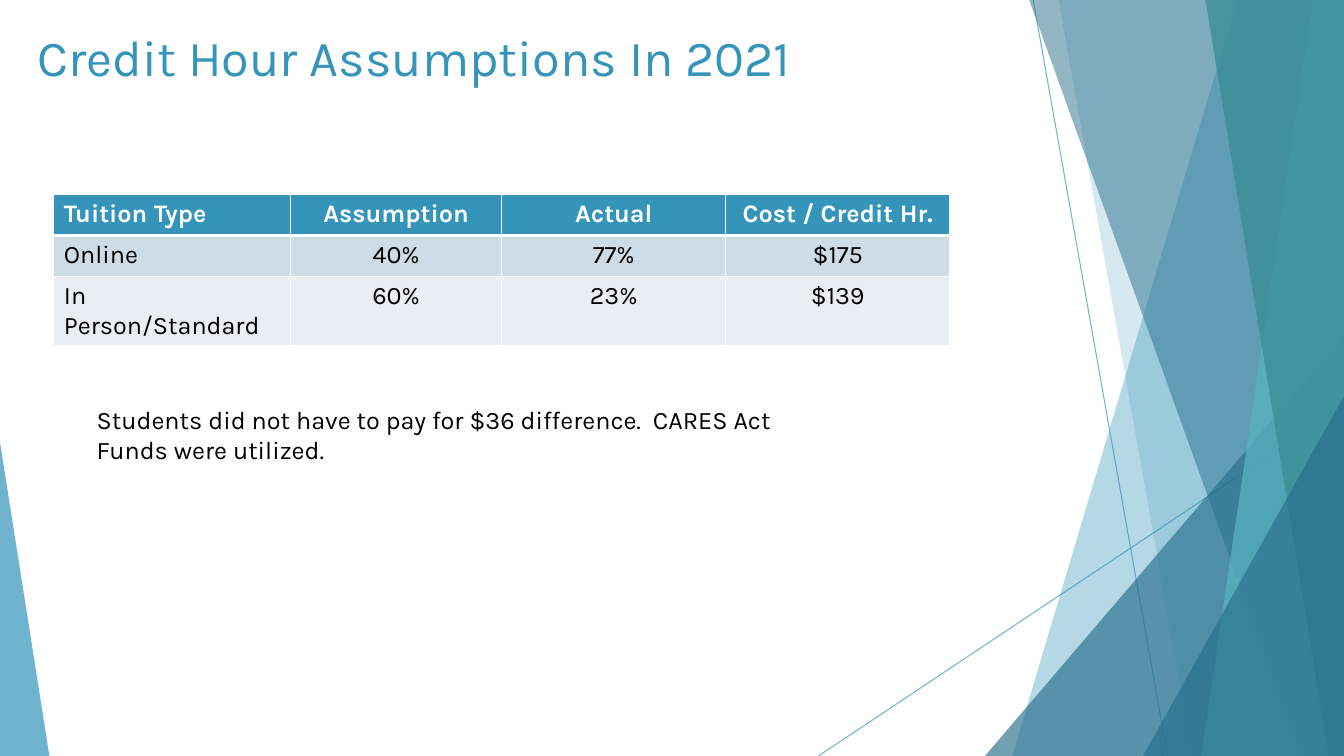
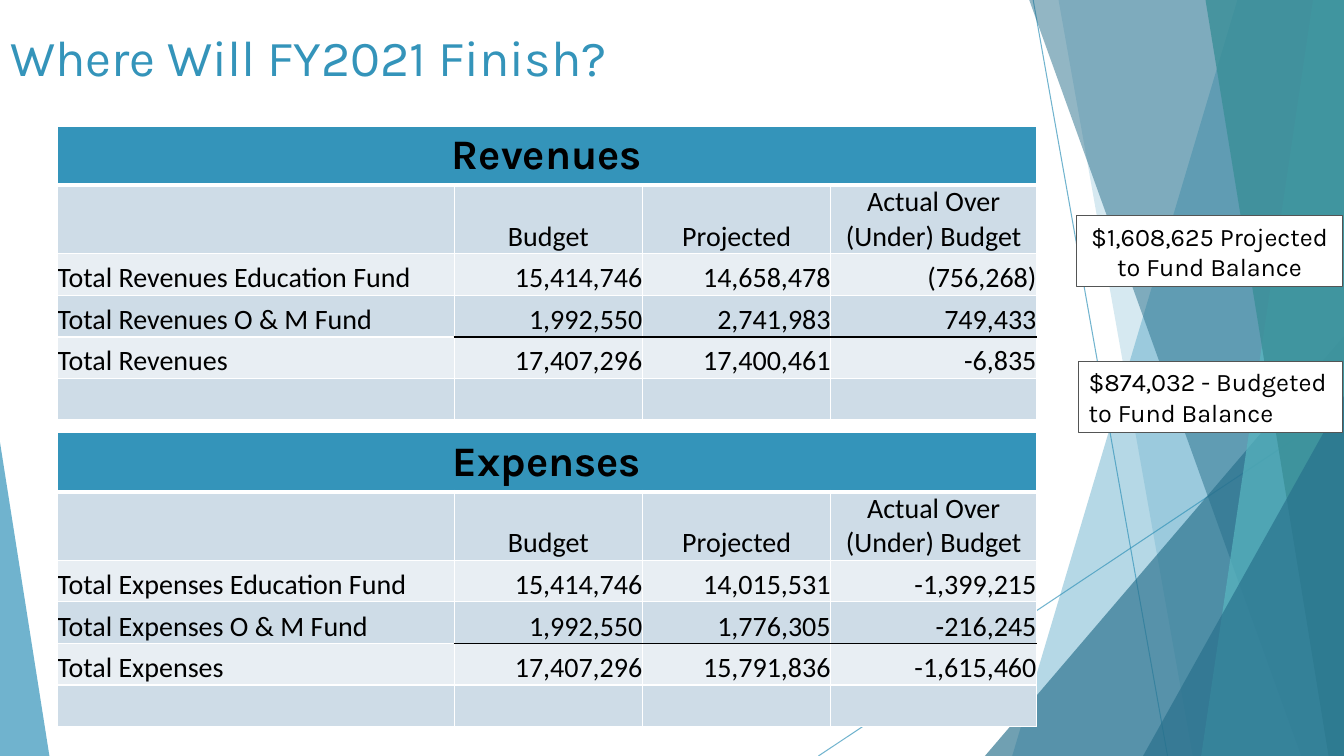
from dataclasses import dataclass
from typing import NamedTuple

from lxml import etree
from pptx import Presentation, presentation as pres, slide as sl, table as tb
from pptx import util as u
from pptx.dml.color import RGBColor
from pptx.enum import shapes, text
from pptx.oxml.ns import qn
from pptx.shapes import autoshape, base
from pptx.text.text import TextFrame

SLIDE_WIDTH, SLIDE_HEIGHT = 960, 540
BAND_TOP = -0.6
COLORS = {
    "accent": "3494BA",
    "deep": "276F8B",
    "teal": "58B6C0",
    "dark_teal": "3A8F98",
    "row_dark": "CEDCE7",
    "row_light": "E8EEF3",
    "outline": "535555",
    "white": "FFFFFF",
    "black": "000000",
}
HEADING_FONT, FIGURE_FONT = "Karla", "Calibri"
LEFT, CENTER, RIGHT = text.PP_ALIGN.LEFT, text.PP_ALIGN.CENTER, text.PP_ALIGN.RIGHT


class Box(NamedTuple):
    left: float
    top: float
    width: float
    height: float

    def lengths(self) -> list[u.Length]:
        return [u.Pt(value) for value in self]


@dataclass(frozen=True)
class Ray:
    start: tuple[float, float]
    end: tuple[float, float]


@dataclass(frozen=True)
class Band:
    """A slanted left edge, filled out to the right side of the slide."""
    top_x: float
    bottom_x: float
    color: str
    opacity: int


@dataclass(frozen=True)
class Triangle:
    box: Box
    apex: float
    color: str
    opacity: int


@dataclass(frozen=True)
class TextStyle:
    size: float
    font: str = HEADING_FONT
    color: str = "black"
    bold: bool = False
    align: text.PP_ALIGN = LEFT


@dataclass(frozen=True)
class FundTable:
    subject: str
    top: float
    education: tuple[str, str, str]
    maintenance: tuple[str, str, str]
    total: tuple[str, str, str]


@dataclass(frozen=True)
class Callout:
    box: Box
    words: str
    align: text.PP_ALIGN


RAYS = [
    Ray((738, 0), (834, SLIDE_HEIGHT)),
    Ray((SLIDE_WIDTH, 290), (584.6, SLIDE_HEIGHT)),
]
FACETS = [
    Band(884, 723, "accent", 36),
    Band(756, 852, "accent", 20),
    Triangle(Box(703.5, 240, 256.5, 300), 1, "deep", 66),
    Band(735, 929.5, "deep", 50),
    Band(938, 858, "teal", 70),
    Band(861, 949, "dark_teal", 80),
    Triangle(Box(816.5, 283, 143.5, 257), 1, "deep", 66),
    Triangle(Box(0, 316, 35.3, 224), 0, "accent", 70),
]

TUITION_ROWS = [
    ("Tuition Type", "Assumption", "Actual", "Cost / Credit Hr."),
    ("Online", "40%", "77%", "$175"),
    ("In Person/Standard", "60%", "23%", "$139"),
]
FUND_HEADINGS = ("", "Budget", "Projected", "Actual Over (Under) Budget")
FUND_TABLES = [
    FundTable("Revenues", 90,
              ("15,414,746", "14,658,478", "(756,268)"),
              ("1,992,550", "2,741,983", "749,433"),
              ("17,407,296", "17,400,461", "-6,835")),
    FundTable("Expenses", 309,
              ("15,414,746", "14,015,531", "-1,399,215"),
              ("1,992,550", "1,776,305", "-216,245"),
              ("17,407,296", "15,791,836", "-1,615,460")),
]
CALLOUTS = [
    Callout(Box(769, 154, 190, 51), "$1,608,625 Projected to Fund Balance", CENTER),
    Callout(Box(770.5, 258, 188.5, 51), "$874,032 - Budgeted to Fund Balance", LEFT),
]


def rgb(name: str) -> RGBColor:
    return RGBColor.from_string(COLORS[name])


def write(frame: TextFrame, words: str, style: TextStyle) -> None:
    frame.text = words
    for paragraph in frame.paragraphs:
        paragraph.alignment = style.align
        for run in paragraph.runs:
            run.font.size = u.Pt(style.size)
            run.font.name = style.font
            run.font.bold = style.bold
            run.font.color.rgb = rgb(style.color)


def set_opacity(shape: base.BaseShape, percent: int) -> None:
    for color in shape.element.iter(qn("a:srgbClr")):
        etree.SubElement(color, qn("a:alpha")).set("val", str(percent * 1000))


def draw_ray(slide: sl.Slide, ray: Ray) -> base.BaseShape:
    ends = [u.Pt(value) for value in ray.start + ray.end]
    connector = slide.shapes.add_connector(shapes.MSO_CONNECTOR.STRAIGHT, *ends)
    connector.line.color.rgb = rgb("accent")
    connector.line.width = u.Pt(0.75)
    set_opacity(connector, 70)
    etree.SubElement(connector.element.spPr, qn("a:effectLst"))
    return connector


def outline_facet(slide: sl.Slide, facet: Band | Triangle) -> autoshape.Shape:
    if isinstance(facet, Triangle):
        shape = slide.shapes.add_shape(
            shapes.MSO_SHAPE.ISOSCELES_TRIANGLE, *facet.box.lengths())
        shape.adjustments[0] = facet.apex
        return shape
    corners = [(facet.top_x, BAND_TOP), (SLIDE_WIDTH, BAND_TOP),
               (SLIDE_WIDTH, SLIDE_HEIGHT), (facet.bottom_x, SLIDE_HEIGHT)]
    first, *others = [(u.Pt(x), u.Pt(y)) for x, y in corners]
    builder = slide.shapes.build_freeform(*first)
    builder.add_line_segments(others, close=True)
    return builder.convert_to_shape()


def draw_facet(slide: sl.Slide, facet: Band | Triangle) -> base.BaseShape:
    shape = outline_facet(slide, facet)
    shape.shadow.inherit = False
    shape.fill.solid()
    shape.fill.fore_color.rgb = rgb(facet.color)
    shape.line.fill.background()
    set_opacity(shape, facet.opacity)
    return shape


def decorate_layout(slide: sl.Slide) -> None:
    """Draw the backdrop and move it to the layout, so that all slides share it."""
    backdrop = [draw_ray(slide, ray) for ray in RAYS]
    backdrop += [draw_facet(slide, facet) for facet in FACETS]
    for position, shape in enumerate(backdrop, start=2):
        slide.slide_layout.shapes.element.insert(position, shape.element)


def add_titled_slide(presentation: pres.Presentation, words: str, box: Box) -> sl.Slide:
    slide = presentation.slides.add_slide(presentation.slide_layouts[5])
    title = slide.shapes.title
    title.left, title.top, title.width, title.height = box.lengths()
    title.text_frame.vertical_anchor = text.MSO_ANCHOR.TOP
    title.text_frame.auto_size = text.MSO_AUTO_SIZE.NONE
    write(title.text_frame, words, TextStyle(36, color="accent"))
    return slide


def set_border(cell: tb._Cell, side: str, color: str, width: float) -> None:
    properties = cell._tc.get_or_add_tcPr()
    line = etree.SubElement(properties, qn(f"a:ln{side}"), w=str(u.Pt(width)))
    fill = etree.SubElement(line, qn("a:solidFill"))
    etree.SubElement(fill, qn("a:srgbClr"), val=COLORS[color])


def add_grid(slide: sl.Slide, left: float, top: float, widths: list[float],
             heights: list[float], ruled_row: int | None = None) -> tb.Table:
    """Add an empty banded table, with a black rule under the figures of ruled_row."""
    box = Box(left, top, sum(widths), sum(heights))
    table = slide.shapes.add_table(len(heights), len(widths), *box.lengths()).table
    table.first_row = table.horz_banding = False
    for column, width in zip(table.columns, widths):
        column.width = u.Pt(width)
    for index, (row, height) in enumerate(zip(table.rows, heights)):
        row.height = u.Pt(height)
        band = "row_dark" if index % 2 else "row_light"
        for position, cell in enumerate(row.cells):
            ruled = ruled_row is not None and position > 0
            above = "black" if ruled and index == ruled_row + 1 else "white"
            below = "black" if ruled and index == ruled_row else "white"
            set_border(cell, "L", "white", 1)
            set_border(cell, "R", "white", 1)
            set_border(cell, "T", above, 3 if index == 1 else 1)
            set_border(cell, "B", below, 1 if index else 3)
            cell.fill.solid()
            cell.fill.fore_color.rgb = rgb(band if index else "accent")
    return table


def add_tuition_table(slide: sl.Slide) -> None:
    table = add_grid(slide, 38.5, 139, [169, 151, 160, 160], [29.2, 29.2, 49.3])
    for row, words in enumerate(TUITION_ROWS):
        for column, word in enumerate(words):
            style = TextStyle(18, color="black" if row else "white",
                              bold=row == 0, align=CENTER if column else LEFT)
            write(table.cell(row, column).text_frame, word, style)


def add_fund_table(slide: sl.Slide, fund: FundTable) -> None:
    table = add_grid(slide, 41, fund.top, [283.5, 134.5, 134.5, 147],
                     [42.3, 48.8, 29.5, 30, 29.5, 29.5], ruled_row=3)
    heading = table.cell(0, 0)
    heading.merge(table.cell(0, 3))
    write(heading.text_frame, fund.subject, TextStyle(30, bold=True, align=CENTER))
    label = f"Total {fund.subject}"
    rows = [
        FUND_HEADINGS,
        (f"{label} Education Fund", *fund.education),
        (f"{label} O & M Fund", *fund.maintenance),
        (label, *fund.total),
    ]
    for row, words in enumerate(rows, start=1):
        for column, word in enumerate(words):
            if not word:
                continue
            cell = table.cell(row, column)
            cell.vertical_anchor = text.MSO_ANCHOR.BOTTOM
            cell.margin_left = cell.margin_right = u.Pt(0)
            cell.margin_top = cell.margin_bottom = u.Pt(0)
            align = CENTER if row == 1 else RIGHT if column else LEFT
            write(cell.text_frame, word, TextStyle(20, FIGURE_FONT, align=align))


def add_note(slide: sl.Slide, box: Box, words: str) -> None:
    frame = slide.shapes.add_textbox(*box.lengths()).text_frame
    frame.word_wrap = True
    write(frame, words, TextStyle(18))


def add_callout(slide: sl.Slide, callout: Callout) -> None:
    shape = slide.shapes.add_shape(shapes.MSO_SHAPE.RECTANGLE, *callout.box.lengths())
    shape.shadow.inherit = False
    shape.fill.solid()
    shape.fill.fore_color.rgb = rgb("white")
    shape.line.color.rgb = rgb("outline")
    shape.line.width = u.Pt(0.75)
    shape.text_frame.word_wrap = True
    write(shape.text_frame, callout.words, TextStyle(18, align=callout.align))


def main() -> None:
    presentation = Presentation()
    presentation.slide_width = u.Pt(SLIDE_WIDTH)
    presentation.slide_height = u.Pt(SLIDE_HEIGHT)

    credit_hours = add_titled_slide(
        presentation, "Credit Hour Assumptions In 2021", Box(19.5, 15, 677, 63))
    decorate_layout(credit_hours)
    add_tuition_table(credit_hours)
    add_note(credit_hours, Box(62, 285, 538.5, 51),
             "Students did not have to pay for $36 difference.  "
             "CARES Act Funds were utilized.")

    finish = add_titled_slide(
        presentation, "Where Will FY2021 Finish?", Box(0, 15, 536.5, 75))
    for fund in FUND_TABLES:
        add_fund_table(finish, fund)
    for callout in CALLOUTS:
        add_callout(finish, callout)

    presentation.save("out.pptx")


if __name__ == "__main__":
    main()
